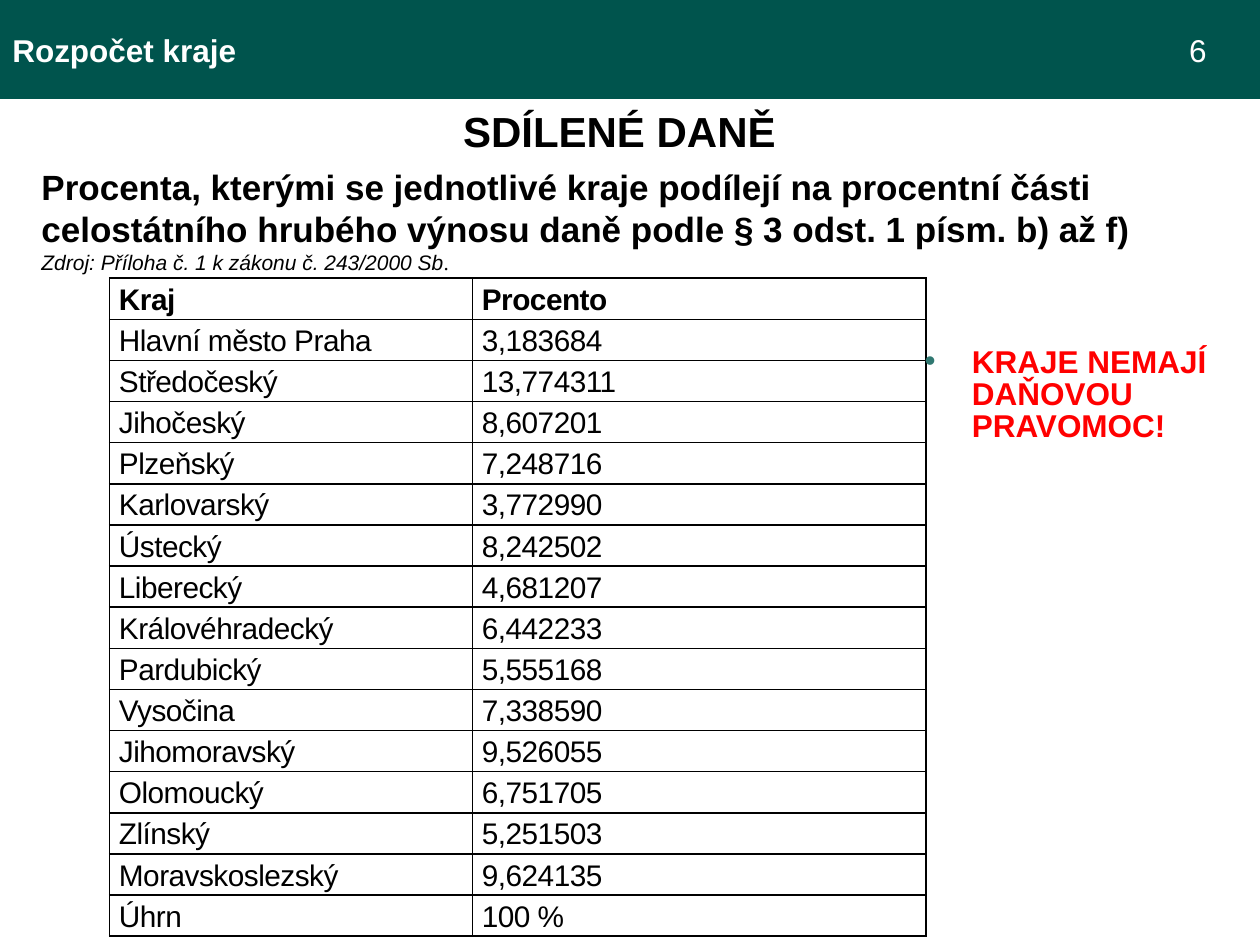
from dataclasses import dataclass

from lxml import etree
from pptx import Presentation
from pptx import util as u
from pptx.dml.color import RGBColor
from pptx.enum import shapes, text
from pptx.oxml import ns

Pt = u.Pt


@dataclass(frozen=True)
class Theme:
    font: str = "Arial"
    period_font: str = "Times New Roman"
    band: str = "00544D"
    light: str = "FFFFFF"
    ink: str = "000000"
    alert: str = "FF0000"
    bullet: str = "307871"
    title: int = 24
    lead: int = 20
    label: int = 18
    cell: int = 17
    source: int = 12


theme = Theme()


def style(run, size, color, bold=False, italic=False, font=theme.font):
    run.font.name = font
    run.font.size = Pt(size)
    run.font.bold = bold
    run.font.italic = italic
    run.font.color.rgb = RGBColor.from_string(color)


def add_xml(parent, tag, **attributes):
    return etree.SubElement(parent, ns.qn(tag), attributes)


deck = Presentation()
deck.slide_width, deck.slide_height = Pt(720), Pt(540)
slide = deck.slides.add_slide(deck.slide_layouts[6])

# Header band with the page number at a tab stop
header = slide.shapes.add_shape(shapes.MSO_SHAPE.RECTANGLE, 0, 0, Pt(720), Pt(56.5))
header.shadow.inherit = False
header.fill.solid()
header.fill.fore_color.rgb = RGBColor.from_string(theme.band)
header.line.fill.background()
header.text_frame.vertical_anchor = text.MSO_ANCHOR.MIDDLE
topic = header.text_frame.paragraphs[0]
topic.alignment = text.PP_ALIGN.LEFT
for words, bold in (("Rozpočet kraje\t", True), ("6", False)):
    run = topic.add_run()
    run.text = words
    style(run, theme.label, theme.light, bold)
tabs = add_xml(topic._p.get_or_add_pPr(), "a:tabLst")
add_xml(tabs, "a:tab", pos=str(Pt(672.5)), algn="l")

# Title
title = slide.shapes.add_textbox(Pt(-6), Pt(56.9), Pt(720), Pt(36)).text_frame
title.word_wrap = True
title.text = "SDÍLENÉ DANĚ"
title.paragraphs[0].alignment = text.PP_ALIGN.CENTER
style(title.paragraphs[0].runs[0], theme.title, theme.ink, bold=True)

# Shares of the regions
shares = [
    ("Kraj", "Procento"),
    ("Hlavní město Praha", "3,183684"),
    ("Středočeský", "13,774311"),
    ("Jihočeský", "8,607201"),
    ("Plzeňský", "7,248716"),
    ("Karlovarský", "3,772990"),
    ("Ústecký", "8,242502"),
    ("Liberecký", "4,681207"),
    ("Královéhradecký", "6,442233"),
    ("Pardubický", "5,555168"),
    ("Vysočina", "7,338590"),
    ("Jihomoravský", "9,526055"),
    ("Olomoucký", "6,751705"),
    ("Zlínský", "5,251503"),
    ("Moravskoslezský", "9,624135"),
    ("Úhrn", "100 %"),
]
row_height = 23.5
table = slide.shapes.add_table(len(shares), 2, Pt(62.6), Pt(159), Pt(466.6),
                               Pt(row_height * len(shares))).table
table.first_row = table.horz_banding = False
table.columns[0].width, table.columns[1].width = Pt(207.4), Pt(259.2)
for row, values in enumerate(shares):
    table.rows[row].height = Pt(row_height)
    for column, value in enumerate(values):
        cell = table.cell(row, column)
        cell.margin_left = cell.margin_right = Pt(5.4)
        cell.margin_top = cell.margin_bottom = 0
        cell.text_frame.text = value
        entry = cell.text_frame.paragraphs[0]
        entry.alignment = text.PP_ALIGN.JUSTIFY
        entry.line_spacing = 1.15
        style(entry.runs[0], theme.cell, theme.ink, bold=row == 0)
        entry.runs[0].font._element.set("spc", "-30")
        # Borders come before the fill in the cell properties
        for side in ("a:lnL", "a:lnR", "a:lnT", "a:lnB"):
            border = add_xml(cell._tc.get_or_add_tcPr(), side, w=str(Pt(1)))
            add_xml(add_xml(border, "a:solidFill"), "a:srgbClr", val=theme.ink)
        cell.fill.background()

# Lead text and source
lead = slide.shapes.add_textbox(Pt(16.6), Pt(90.7), Pt(640), Pt(70.6)).text_frame
lead.word_wrap = False
lead.vertical_anchor = text.MSO_ANCHOR.MIDDLE
lead.text = ("Procenta, kterými se jednotlivé kraje podílejí na procentní části\n"
             "celostátního hrubého výnosu daně podle § 3 odst. 1 písm. b) až f)\n"
             "Zdroj: Příloha č. 1 k zákonu č. 243/2000 Sb")
*statement, source = lead.paragraphs
for line in statement:
    style(line.runs[0], theme.lead, theme.ink, bold=True)
style(source.runs[0], theme.source, theme.ink, italic=True)
period = source.add_run()
period.text = "."
style(period, theme.source, theme.ink, italic=True, font=theme.period_font)

# Warning beside the table
warning = slide.shapes.add_textbox(Pt(521.3), Pt(195), Pt(177.8), Pt(62.6)).text_frame
warning.word_wrap = True
warning.text = "KRAJE NEMAJÍ DAŇOVOU PRAVOMOC!"
point = warning.paragraphs[0]
point.line_spacing = 0.85
style(point.runs[0], theme.label, theme.alert, bold=True)
point_format = point._p.get_or_add_pPr()
point_format.set("marL", str(Pt(27)))
point_format.set("indent", str(Pt(-27)))
add_xml(add_xml(point_format, "a:buClr"), "a:srgbClr", val=theme.bullet)
add_xml(point_format, "a:buFont", typeface=theme.font)
add_xml(point_format, "a:buChar", char="•")

deck.save("out.pptx")
